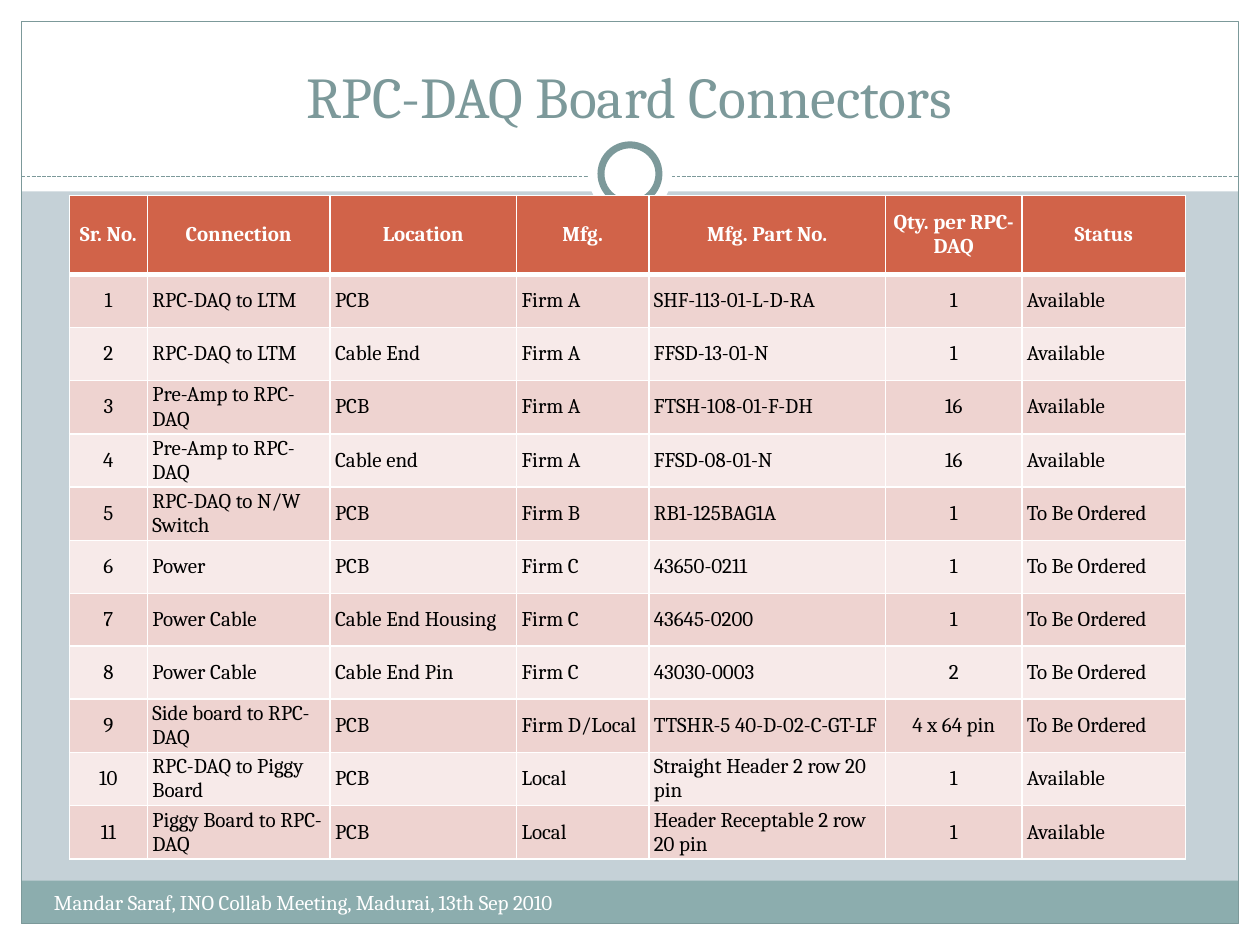
"""Build the RPC-DAQ board connectors slide."""
import pptx
import pptx.dml.color
import pptx.enum.dml
import pptx.enum.shapes
import pptx.enum.text
import pptx.oxml
import pptx.oxml.ns
import pptx.util

Inches = pptx.util.Inches
Points = pptx.util.Pt
Shapes = pptx.enum.shapes.MSO_SHAPE
Align = pptx.enum.text.PP_ALIGN
Anchor = pptx.enum.text.MSO_ANCHOR

TITLE = "RPC-DAQ Board Connectors"
FOOTER = "Mandar Saraf, INO Collab Meeting, Madurai, 13th Sep 2010"
COLUMNS = [
    ("Sr. No.", 0.62, Align.CENTER),
    ("Connection", 1.45, Align.LEFT),
    ("Location", 1.48, Align.LEFT),
    ("Mfg.", 1.05, Align.LEFT),
    ("Mfg. Part No.", 1.88, Align.LEFT),
    ("Qty. per RPC-DAQ", 1.08, Align.CENTER),
    ("Status", 1.3, Align.LEFT),
]
CONNECTORS = [
    ("RPC-DAQ to LTM", "PCB", "Firm A", "SHF-113-01-L-D-RA", "1", "Available"),
    ("RPC-DAQ to LTM", "Cable End", "Firm A", "FFSD-13-01-N", "1", "Available"),
    ("Pre-Amp to RPC-DAQ", "PCB", "Firm A", "FTSH-108-01-F-DH", "16", "Available"),
    ("Pre-Amp to RPC-DAQ", "Cable end", "Firm A", "FFSD-08-01-N", "16", "Available"),
    ("RPC-DAQ to N/W Switch", "PCB", "Firm B", "RB1-125BAG1A", "1", "To Be Ordered"),
    ("Power", "PCB", "Firm C", "43650-0211", "1", "To Be Ordered"),
    ("Power Cable", "Cable End Housing", "Firm C", "43645-0200", "1", "To Be Ordered"),
    ("Power Cable", "Cable End Pin", "Firm C", "43030-0003", "2", "To Be Ordered"),
    ("Side board to RPC-DAQ", "PCB", "Firm D/Local", "TTSHR-5 40-D-02-C-GT-LF",
     "4 x 64 pin", "To Be Ordered"),
    ("RPC-DAQ to Piggy Board", "PCB", "Local", "Straight Header 2 row 20 pin",
     "1", "Available"),
    ("Piggy Board to RPC-DAQ", "PCB", "Local", "Header Receptable 2 row 20 pin",
     "1", "Available"),
]
THEME = {
    "font": "Cambria", "title_size": 33, "body_size": 12,
    "background": "C5D1D7", "white": "FFFFFF", "black": "000000",
    "accent": "7C999A", "footer": "8CADAE",
    "header": "D16349", "bands": ("EED3D0", "F7EAE9"),
}
WIDTH, HEIGHT, MARGIN = 10, 7.5, 0.17
HEADER_BOTTOM, RULE_TOP, FOOTER_TOP = 1.52, 1.4, 6.99
RING_CENTER = 1.38
TABLE_LEFT, TABLE_TOP, HEADER_ROW, BODY_ROW = 0.55, 1.55, 0.63, 0.42


def color(value):
    return pptx.dml.color.RGBColor.from_string(value)


def set_all(target, values):
    for name, value in values.items():
        setattr(target, name, value)


def place(shape, left, top, width, height):
    set_all(shape, {"left": Inches(left), "top": Inches(top),
                    "width": Inches(width), "height": Inches(height)})


def write(frame, text, size, text_color, align=Align.LEFT, bold=False):
    paragraph = frame.paragraphs[0]
    paragraph.text = text
    paragraph.alignment = align
    font = paragraph.runs[0].font
    set_all(font, {"name": THEME["font"], "size": Points(size), "bold": bold})
    font.color.rgb = color(text_color)


def add_panel(slide, kind, box, fill=None, line=None, line_width=0.75):
    shape = slide.shapes.add_shape(kind, *map(Inches, box))
    shape.shadow.inherit = False
    if fill:
        shape.fill.solid()
        shape.fill.fore_color.rgb = color(fill)
    else:
        shape.fill.background()
    if line:
        shape.line.color.rgb = color(line)
        shape.line.width = Points(line_width)
    else:
        shape.line.fill.background()


def add_frame(slide):
    white, accent = THEME["white"], THEME["accent"]
    inner_width, inner_height = WIDTH - 2 * MARGIN, HEIGHT - 2 * MARGIN
    for box in [(0, HEIGHT - MARGIN, WIDTH, MARGIN), (0, 0, WIDTH, HEADER_BOTTOM),
                (0, 0, MARGIN, HEIGHT), (WIDTH - MARGIN, 0, MARGIN, HEIGHT)]:
        add_panel(slide, Shapes.RECTANGLE, box, white)
    footer_box = (MARGIN, FOOTER_TOP, inner_width, HEIGHT - MARGIN - FOOTER_TOP)
    add_panel(slide, Shapes.RECTANGLE, footer_box, THEME["footer"])
    add_panel(slide, Shapes.RECTANGLE, (MARGIN, MARGIN, inner_width, inner_height), line=accent)
    rule = slide.shapes.add_connector(
        pptx.enum.shapes.MSO_CONNECTOR.STRAIGHT,
        *map(Inches, (MARGIN, RULE_TOP, WIDTH - MARGIN, RULE_TOP)))
    rule.line.color.rgb = color(accent)
    set_all(rule.line, {"width": Points(0.75),
                        "dash_style": pptx.enum.dml.MSO_LINE.SQUARE_DOT})
    properties = rule._element.spPr
    properties.append(properties.makeelement(pptx.oxml.ns.qn("a:effectLst"), {}))
    for size, line in [(0.67, None), (0.46, accent)]:
        box = ((WIDTH - size) / 2, RING_CENTER - size / 2, size, size)
        add_panel(slide, Shapes.OVAL, box, white, line, 4)


def add_borders(cell, bottom_width):
    properties = cell._tc.get_or_add_tcPr()
    for side, width in [("L", 1), ("R", 1), ("T", 1), ("B", bottom_width)]:
        properties.append(pptx.oxml.parse_xml(
            f'<a:ln{side} {pptx.oxml.ns.nsdecls("a")} w="{Points(width)}"><a:solidFill>'
            f'<a:srgbClr val="{THEME["white"]}"/></a:solidFill></a:ln{side}>'))


def fill_cell(cell, text, align, fill, text_color, header):
    set_all(cell, {"vertical_anchor": Anchor.MIDDLE,
                   "margin_left": Inches(0.04), "margin_right": Inches(0.04),
                   "margin_top": Inches(0.02), "margin_bottom": Inches(0.02)})
    add_borders(cell, 3 if header else 1)
    cell.fill.solid()
    cell.fill.fore_color.rgb = color(fill)
    write(cell.text_frame, text, THEME["body_size"], text_color, align, header)


def add_connector_table(slide):
    names, widths, aligns = zip(*COLUMNS)
    rows = [names] + [(str(number), *row) for number, row in enumerate(CONNECTORS, 1)]
    heights = [HEADER_ROW] + [BODY_ROW] * len(CONNECTORS)
    table = slide.shapes.add_table(
        len(rows), len(names),
        *map(Inches, (TABLE_LEFT, TABLE_TOP, sum(widths), sum(heights)))).table
    for column, width in zip(table.columns, widths):
        column.width = Inches(width)
    for index, (row, height) in enumerate(zip(rows, heights)):
        header = index == 0
        table.rows[index].height = Inches(height)
        fill = THEME["header"] if header else THEME["bands"][(index - 1) % 2]
        text_color = THEME["white" if header else "black"]
        for cell, text, align in zip(table.rows[index].cells, row, aligns):
            fill_cell(cell, text, Align.CENTER if header else align, fill, text_color, header)


def main():
    presentation = pptx.Presentation()
    set_all(presentation, {"slide_width": Inches(WIDTH), "slide_height": Inches(HEIGHT)})
    slide = presentation.slides.add_slide(presentation.slide_layouts[5])
    slide.background.fill.solid()
    slide.background.fill.fore_color.rgb = color(THEME["background"])
    add_frame(slide)

    title = slide.shapes.title
    slide.shapes._spTree.append(title._element)
    place(title, 0.33, 0.25, 9.33, 0.83)
    title.text_frame.vertical_anchor = Anchor.BOTTOM
    write(title.text_frame, TITLE, THEME["title_size"], THEME["accent"], Align.CENTER)

    add_connector_table(slide)
    footer = slide.shapes.add_textbox(*map(Inches, (0.33, 7.01, 6.56, 0.4)))
    footer.text_frame.word_wrap = True
    write(footer.text_frame, FOOTER, THEME["body_size"], THEME["white"])
    presentation.save("out.pptx")


if __name__ == "__main__":
    main()
